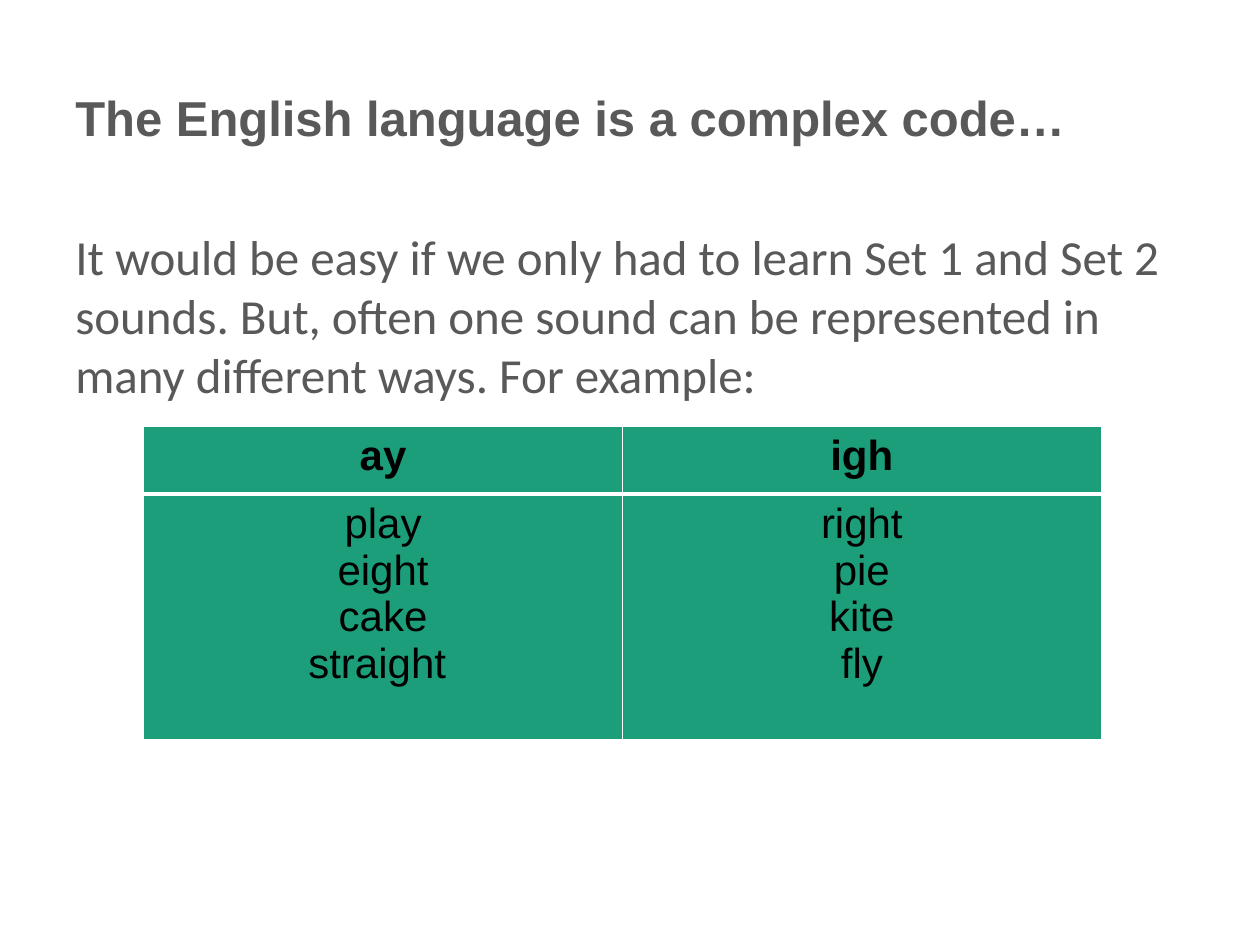
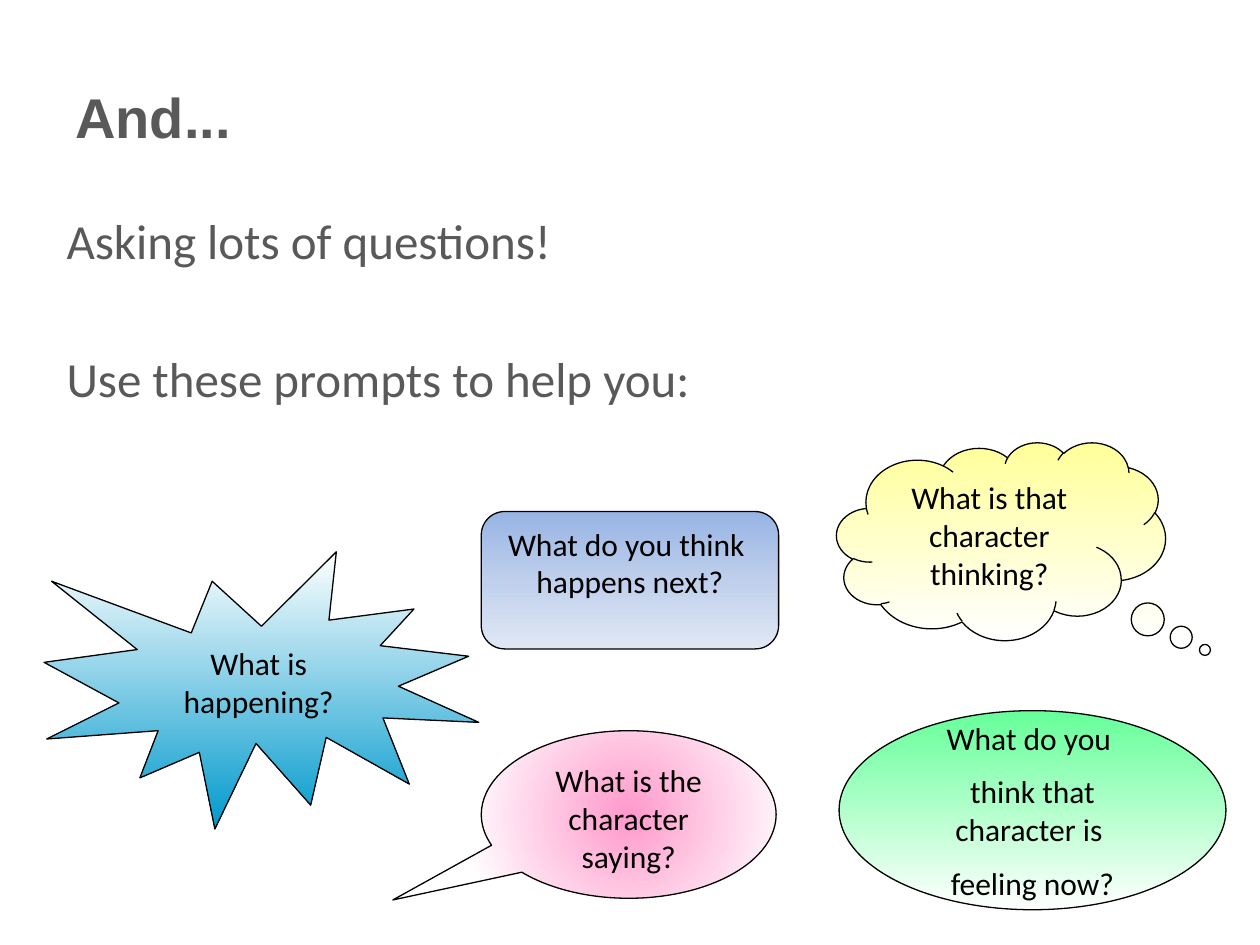
from dataclasses import dataclass
from typing import NamedTuple

from pptx import Presentation
from pptx.dml.color import RGBColor
from pptx.enum.shapes import MSO_SHAPE
from pptx.enum.text import MSO_ANCHOR, PP_ALIGN
from pptx.oxml import parse_xml
from pptx.oxml.ns import nsdecls, qn
from pptx.slide import Slide
from pptx.text.text import TextFrame
from pptx.util import Emu, Pt

EMU_PER_PX = 9144
COLORS = {
    "text": "595959",
    "ink": "000000",
    "white": "FFFFFF",
    "table": "1D9E7A",
    "yellow": "FFFF99",
    "pink": "FF99CC",
    "green": "66FF99",
    "cyan": "0099CC",
    "blue": "97B4E4",
    "mid_blue": "BFCFEC",
    "pale_blue": "E0E8F4",
}


class Box(NamedTuple):
    left: int
    top: int
    width: int
    height: int

    def emu(self) -> list[Emu]:
        return [px(length) for length in self]


@dataclass(frozen=True)
class TextStyle:
    size: int
    font: str = "Calibri"
    color: str = "ink"
    bold: bool = False
    align: PP_ALIGN = PP_ALIGN.CENTER
    space_before: float = 0


@dataclass(frozen=True)
class Prompt:
    kind: MSO_SHAPE
    box: Box
    stops: tuple[str, ...]
    lines: tuple[str, ...]
    anchor: MSO_ANCHOR = MSO_ANCHOR.TOP
    adjustments: tuple[float, ...] = ()
    radial: bool = False
    space_before: float = 0


TITLE_BOX = Box(50, 30, 900, 125)
SOUNDS = {
    "ay": ("play", "eight", "cake", "straight "),
    "igh": ("right", "pie", "kite", "fly"),
}
PROMPTS = (
    Prompt(MSO_SHAPE.CLOUD_CALLOUT, Box(664, 351, 261, 157), ("yellow", "white"),
           ("What is that character thinking?",), adjustments=(0.62, 0.55)),
    Prompt(MSO_SHAPE.OVAL_CALLOUT, Box(382, 580, 234, 133), ("pink", "white"),
           ("What is the character saying?",), adjustments=(-0.8, 0.51), radial=True),
    Prompt(MSO_SHAPE.OVAL, Box(666, 564, 307, 158), ("green", "white"),
           ("What do you ", "think that character is ", "feeling now?"),
           anchor=MSO_ANCHOR.MIDDLE, space_before=9),
    Prompt(MSO_SHAPE.EXPLOSION1, Box(35, 438, 345, 220), ("white", "cyan"),
           ("What is happening?",), anchor=MSO_ANCHOR.MIDDLE),
    Prompt(MSO_SHAPE.ROUNDED_RECTANGLE, Box(382, 406, 236, 109),
           ("blue", "mid_blue", "pale_blue"),
           ("What do you think ", "happens next?"), adjustments=(0.17,)),
)


def px(length: int) -> Emu:
    return Emu(length * EMU_PER_PX)


def rgb(name: str) -> RGBColor:
    return RGBColor.from_string(COLORS[name])


def write_lines(frame: TextFrame, lines: tuple[str, ...], style: TextStyle) -> None:
    for index, line in enumerate(lines):
        paragraph = frame.add_paragraph() if index else frame.paragraphs[0]
        paragraph.alignment = style.align
        if index and style.space_before:
            paragraph.space_before = Pt(style.space_before)
        run = paragraph.add_run()
        run.text = line
        run.font.name = style.font
        run.font.size = Pt(style.size)
        run.font.bold = style.bold
        run.font.color.rgb = rgb(style.color)


def add_text(slide: Slide, box: Box, lines: tuple[str, ...], style: TextStyle,
             anchor: MSO_ANCHOR = MSO_ANCHOR.TOP) -> None:
    frame = slide.shapes.add_textbox(*box.emu()).text_frame
    frame.word_wrap = True
    frame.vertical_anchor = anchor
    write_lines(frame, lines, style)


def add_title(slide: Slide, title: str, size: int) -> None:
    style = TextStyle(size, "Arial", "text", True, PP_ALIGN.LEFT)
    add_text(slide, TITLE_BOX, (title,), style, MSO_ANCHOR.MIDDLE)


def add_body(slide: Slide, box: Box, lines: tuple[str, ...], gap: float = 0) -> None:
    style = TextStyle(28, color="text", align=PP_ALIGN.LEFT, space_before=gap)
    add_text(slide, box, lines, style)


def gradient_xml(stops: tuple[str, ...], radial: bool) -> str:
    step = 100000 // (len(stops) - 1)
    stop_xml = "".join(
        f'<a:gs pos="{index * step}"><a:srgbClr val="{COLORS[name]}"/></a:gs>'
        for index, name in enumerate(stops)
    )
    direction = '<a:lin ang="5400000" scaled="0"/>'
    if radial:
        direction = ('<a:path path="circle"><a:fillToRect l="50000" t="50000" '
                     'r="50000" b="50000"/></a:path>')
    return (f'<a:gradFill {nsdecls("a")} rotWithShape="1">'
            f'<a:gsLst>{stop_xml}</a:gsLst>{direction}</a:gradFill>')


def add_prompt(slide: Slide, prompt: Prompt) -> None:
    shape = slide.shapes.add_shape(prompt.kind, *prompt.box.emu())
    shape.shadow.inherit = False
    for index, value in enumerate(prompt.adjustments):
        shape.adjustments[index] = value
    shape.fill.gradient()
    properties = shape._element.spPr
    properties.replace(properties.find(qn("a:gradFill")),
                       parse_xml(gradient_xml(prompt.stops, prompt.radial)))
    shape.line.color.rgb = rgb("ink")
    shape.line.width = Pt(0.75)
    frame = shape.text_frame
    frame.word_wrap = True
    frame.vertical_anchor = prompt.anchor
    write_lines(frame, prompt.lines, TextStyle(18, space_before=prompt.space_before))


def border_xml(side: str, points: int) -> str:
    return (f'<a:ln{side} {nsdecls("a")} w="{Pt(points)}"><a:solidFill>'
            f'<a:srgbClr val="{COLORS["white"]}"/></a:solidFill></a:ln{side}>')


def add_sound_table(slide: Slide, box: Box, row_heights: tuple[int, ...]) -> None:
    table = slide.shapes.add_table(len(row_heights), len(SOUNDS), *box.emu()).table
    table.horz_banding = False
    for row, height in zip(table.rows, row_heights):
        row.height = px(height)
    for column, (sound, words) in enumerate(SOUNDS.items()):
        for row, lines in enumerate(((sound,), words)):
            is_header = row == 0
            cell = table.cell(row, column)
            cell.fill.solid()
            cell.fill.fore_color.rgb = rgb("table")
            write_lines(cell.text_frame, lines, TextStyle(24, "Arial", bold=is_header))
            widths = {"L": 1, "R": 1, "T": 1 if is_header else 3, "B": 3 if is_header else 1}
            properties = cell._tc.get_or_add_tcPr()
            for index, (side, points) in enumerate(widths.items()):
                properties.insert(index, parse_xml(border_xml(side, points)))


def build_code_slide(slide: Slide) -> None:
    add_title(slide, "The English language is a complex code…", 28)
    add_body(slide, Box(50, 175, 900, 495), (
        "It would be easy if we only had to learn Set 1 and Set 2 sounds. "
        "But, often one sound can be represented in many different ways. For example:",
    ))
    add_sound_table(slide, Box(114, 338, 760, 249), (54, 195))


def build_question_slide(slide: Slide) -> None:
    add_title(slide, "And...", 32)
    add_body(slide, Box(43, 162, 900, 475),
             ("Asking lots of questions!", "Use these prompts to help you:"), 45.4)
    for prompt in PROMPTS:
        add_prompt(slide, prompt)


def main() -> None:
    presentation = Presentation()
    presentation.slide_width = px(1000)
    presentation.slide_height = px(750)
    blank_layout = presentation.slide_layouts[6]
    for build in (build_code_slide, build_question_slide):
        build(presentation.slides.add_slide(blank_layout))
    presentation.save("out.pptx")


if __name__ == "__main__":
    main()
